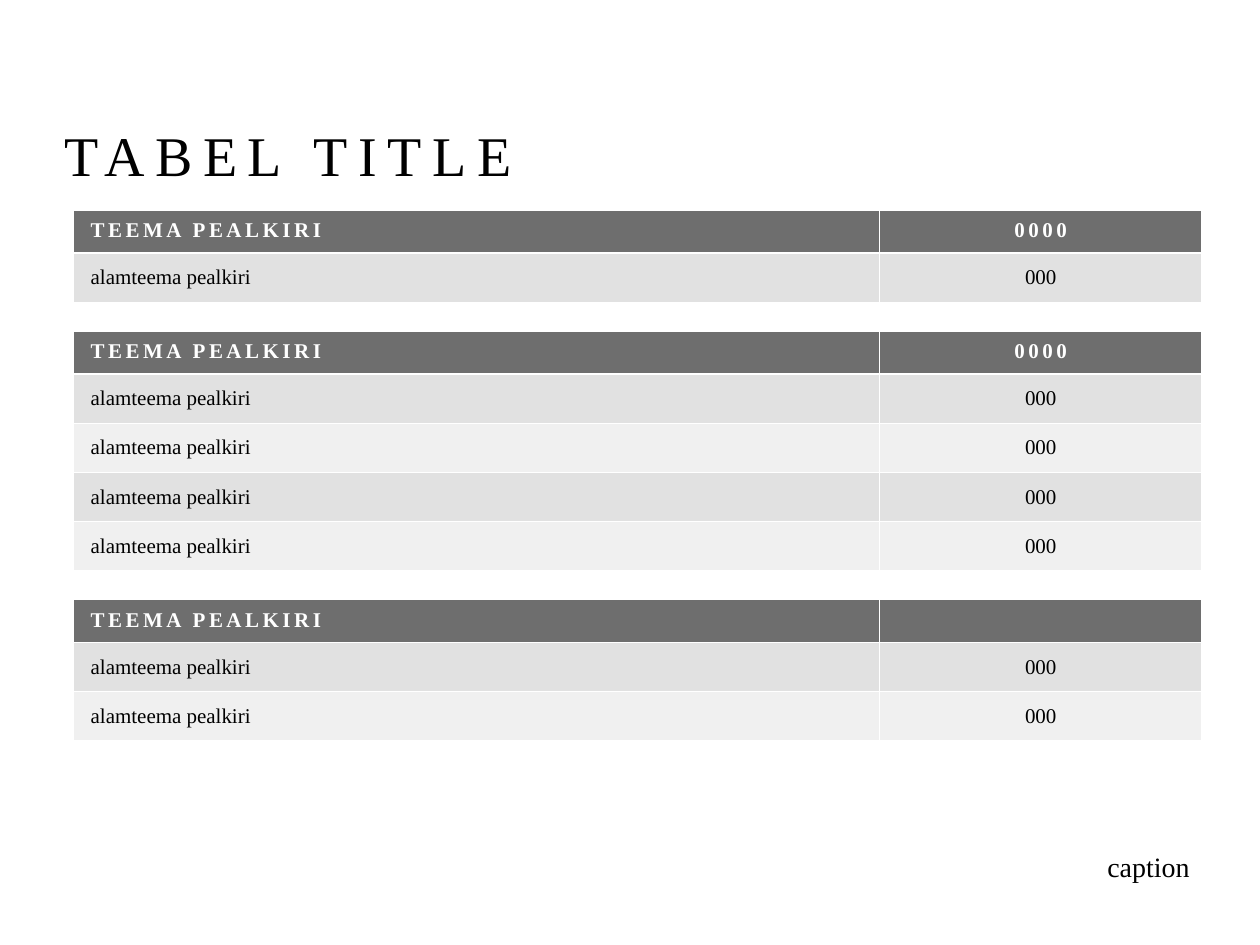
from dataclasses import dataclass

from lxml.etree import SubElement
from pptx import Presentation
from pptx.dml.color import RGBColor
from pptx.enum.text import MSO_ANCHOR, PP_ALIGN
from pptx.oxml.ns import qn
from pptx.util import Inches, Pt

GRID_COLUMNS, GRID_ROWS = 100, 75
GRID_UNIT = Inches(0.1)


@dataclass(frozen=True)
class Theme:
    """Colours, font and type sizes of the slide."""
    font: str = "Times New Roman"
    ink: str = "000000"
    header_ink: str = "FFFFFF"
    header_fill: str = "6E6E6E"
    band_fills: tuple[str, str] = ("E1E1E1", "F0F0F0")
    title_size: int = 32
    table_size: int = 12
    caption_size: int = 16


@dataclass(frozen=True)
class TableLayout:
    """Table measures in grid units."""
    left: float = 5.8
    top: float = 16.7
    columns: tuple[float, float] = (64, 25.6)
    header_height: float = 3.2
    row_height: float = 3.9
    gap: float = 2.5


@dataclass(frozen=True)
class Topic:
    """One topic table: its header and its subtopic rows."""
    header: tuple[str, str]
    rows: tuple[tuple[str, str], ...]


THEME = Theme()
LAYOUT = TableLayout()
SUBTOPIC = ("alamteema pealkiri", "000")
TOPICS = (
    Topic(("TEEMA PEALKIRI", "0000"), (SUBTOPIC,)),
    Topic(("TEEMA PEALKIRI", "0000"), (SUBTOPIC,) * 4),
    Topic(("TEEMA PEALKIRI", ""), (SUBTOPIC,) * 2),
)


def grid(units: float) -> int:
    """Convert grid units to a slide length."""
    return round(units * GRID_UNIT)


def write_text(text_frame, text: str, *, size: int, color: str = THEME.ink, bold: bool = False,
               spacing: int = 0, align=PP_ALIGN.LEFT):
    """Write one formatted paragraph and return it."""
    paragraph = text_frame.paragraphs[0]
    paragraph.alignment = align
    if not text:
        SubElement(paragraph._p, qn("a:endParaRPr"), sz=str(size * 100))
        return paragraph
    run = paragraph.add_run()
    run.text = text
    run.font.name = THEME.font
    run.font.size = Pt(size)
    run.font.bold = bold
    run.font.color.rgb = RGBColor.from_string(color)
    run.font._element.set("spc", str(spacing * 100))
    return paragraph


def add_text_box(slide, left: float, top: float, width: float, height: float, text: str, **text_format):
    """Add a bottom-anchored text box placed in grid units."""
    text_frame = slide.shapes.add_textbox(*map(grid, (left, top, width, height))).text_frame
    text_frame.word_wrap = True
    text_frame.vertical_anchor = MSO_ANCHOR.BOTTOM
    return write_text(text_frame, text, **text_format)


def fill_row(table, row_index: int, texts: tuple[str, str], fill: str, anchor, **text_format) -> None:
    """Fill one table row with a left label and a centred value."""
    for column_index, (text, align) in enumerate(zip(texts, (PP_ALIGN.LEFT, PP_ALIGN.CENTER))):
        cell = table.cell(row_index, column_index)
        cell.fill.solid()
        cell.fill.fore_color.rgb = RGBColor.from_string(fill)
        cell.margin_left = cell.margin_right = grid(1.4)
        cell.margin_top = cell.margin_bottom = grid(0.7)
        cell.vertical_anchor = anchor
        write_text(cell.text_frame, text, size=THEME.table_size, align=align, **text_format)


def add_topic_table(slide, topic: Topic, top: float) -> float:
    """Add a topic table and return its height in grid units."""
    heights = [LAYOUT.header_height] + [LAYOUT.row_height] * len(topic.rows)
    table = slide.shapes.add_table(
        len(heights), len(LAYOUT.columns), grid(LAYOUT.left), grid(top),
        grid(sum(LAYOUT.columns)), grid(sum(heights))).table
    for column, width in zip(table.columns, LAYOUT.columns):
        column.width = grid(width)
    for row, height in zip(table.rows, heights):
        row.height = grid(height)
    fill_row(table, 0, topic.header, THEME.header_fill, MSO_ANCHOR.TOP,
             color=THEME.header_ink, bold=True, spacing=2)
    for index, texts in enumerate(topic.rows):
        fill_row(table, index + 1, texts, THEME.band_fills[index % 2], MSO_ANCHOR.MIDDLE)
    return sum(heights)


def main() -> None:
    """Build and save the slide."""
    presentation = Presentation()
    presentation.slide_width = grid(GRID_COLUMNS)
    presentation.slide_height = grid(GRID_ROWS)
    slide = presentation.slides.add_slide(presentation.slide_layouts[6])
    add_text_box(slide, 4.1, 3, 91.5, 12.4, "TABEL TITLE", size=THEME.title_size, spacing=6)
    top = LAYOUT.top
    for topic in TOPICS:
        top += add_topic_table(slide, topic, top) + LAYOUT.gap
    caption = add_text_box(slide, 30.1, 64.4, 65.3, 6.2, "caption",
                           size=THEME.caption_size, align=PP_ALIGN.RIGHT)
    caption.line_spacing = 1.2
    presentation.save("out.pptx")


if __name__ == "__main__":
    main()
